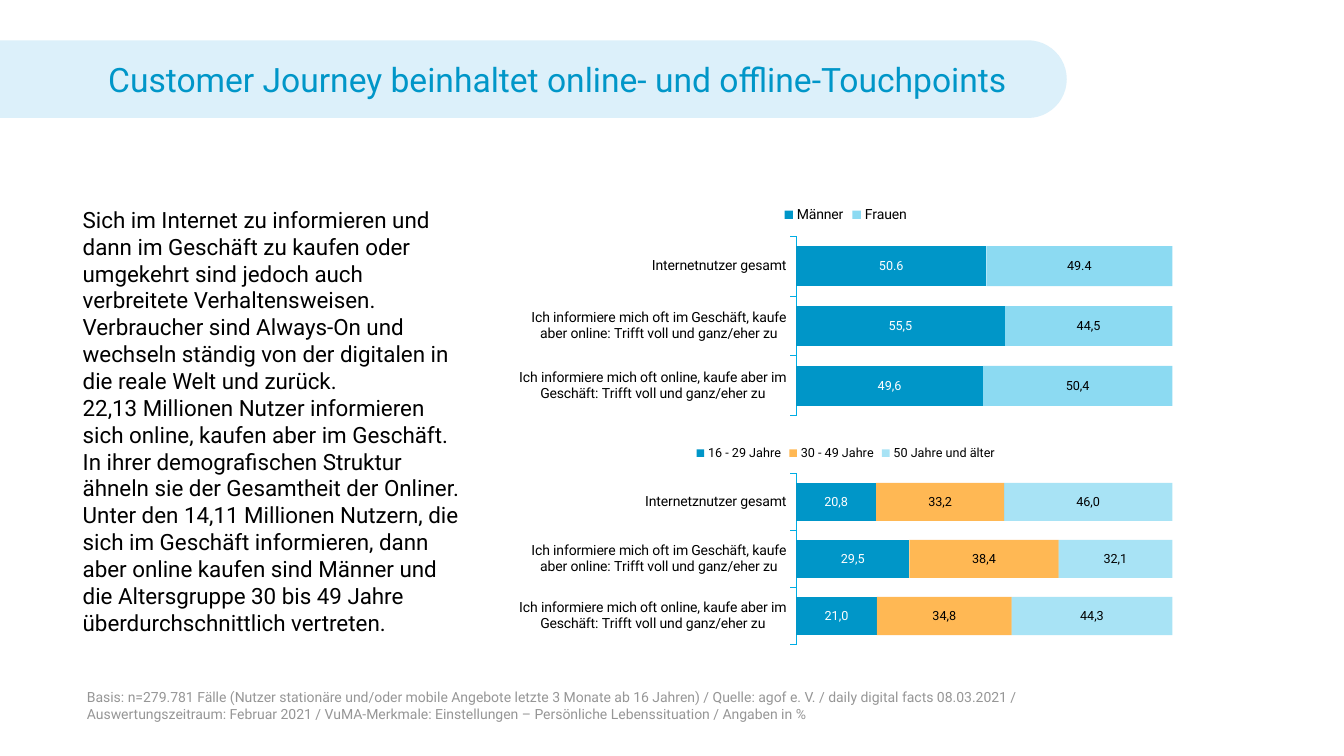
from lxml.etree import SubElement
from pptx import Presentation
from pptx.chart.data import CategoryChartData
from pptx.dml.color import RGBColor
from pptx.enum.chart import XL_CHART_TYPE as ChartType, XL_LEGEND_POSITION as LegendPosition
from pptx.enum.chart import XL_TICK_MARK as TickMark
from pptx.enum.shapes import MSO_SHAPE as Shape
from pptx.enum.text import MSO_ANCHOR as Anchor, PP_ALIGN as Align
from pptx.oxml import parse_xml
from pptx.oxml.ns import nsdecls, qn
from pptx.util import Pt

FONT = "Roboto"
BLACK, WHITE, GREY = "000000", "FFFFFF", "969696"
BLUE, CYAN, ORANGE, PALE = "0096C8", "00ADE4", "FF9600", "DCF0FA"
STORE_THEN_ONLINE = "Ich informiere mich oft im Geschäft, kaufe aber online: Trifft voll und ganz/eher zu"
ONLINE_THEN_STORE = "Ich informiere mich oft online, kaufe aber im Geschäft: Trifft voll und ganz/eher zu"

BODY = (
    "Sich im Internet zu informieren und dann im Geschäft zu kaufen oder umgekehrt sind jedoch "
    "auch verbreitete Verhaltensweisen. Verbraucher sind Always-On und wechseln ständig von der "
    "digitalen in die reale Welt und zurück.\n"
    "22,13 Millionen Nutzer informieren sich online, kaufen aber im Geschäft. In ihrer "
    "demografischen Struktur ähneln sie der Gesamtheit der Onliner. Unter den 14,11 Millionen "
    "Nutzern, die sich im Geschäft informieren, dann aber online kaufen sind Männer und die "
    "Altersgruppe 30 bis 49 Jahre überdurchschnittlich vertreten."
)
SOURCE = (
    "Basis: n=279.781 Fälle (Nutzer stationäre und/oder mobile Angebote letzte 3 Monate ab 16 "
    "Jahren) / Quelle: agof e. V. / daily digital facts 08.03.2021 / Auswertungszeitraum: Februar "
    "2021 / VuMA-Merkmale: Einstellungen – Persönliche Lebenssituation / Angaben in %"
)
GENDER_SERIES = [
    ("Männer", (50.6, 55.5, 49.7), (None, "55,5", "49,6"), BLUE, 100, WHITE),
    ("Frauen", (49.4, 44.5, 50.3), (None, "44,5", "50,4"), CYAN, 45, BLACK),
]
AGE_SERIES = [
    ("16 - 29 Jahre", (21.3, 30.1, 21.5), ("20,8", "29,5", "21,0"), BLUE, 100, WHITE),
    ("30 - 49 Jahre", (34, 39.6, 35.8), ("33,2", "38,4", "34,8"), ORANGE, 67, BLACK),
    ("50 Jahre und älter", (44.7, 30.2, 42.7), ("46,0", "32,1", "44,3"), CYAN, 34, BLACK),
]


def color(value):
    """Turn a hex string into a colour."""
    return RGBColor.from_string(value)


def style_font(font, size, ink):
    """Set typeface, size and colour of a font."""
    font.name, font.size, font.bold = FONT, Pt(size), False
    font.color.rgb = color(ink)


def write(frame, text, size=16, ink=BLACK, align=Align.LEFT, anchor=Anchor.TOP):
    """Fill a text frame with one formatted paragraph."""
    frame.word_wrap, frame.vertical_anchor = True, anchor
    para = frame.paragraphs[0]
    para.text, para.alignment = text, align
    for span in para.runs:
        style_font(span.font, size, ink)


def add_text(page, place, text, **style):
    """Add a text box at a place given in points."""
    box = page.shapes.add_textbox(*map(Pt, place))
    write(box.text_frame, text, **style)


def add_title(page, text):
    """Draw the rounded band and set the title on it."""
    band = page.shapes.add_shape(Shape.ROUNDED_RECTANGLE, Pt(-97), Pt(28.8), Pt(859), Pt(55.5))
    band.adjustments[0] = 0.5
    band.shadow.inherit = False
    band.fill.solid()
    band.fill.fore_color.rgb = color(PALE)
    band.line.fill.background()
    title = page.shapes.title
    title.left, title.top, title.width, title.height = map(Pt, (40, 28.8, 679, 55.5))
    frame = title.text_frame
    frame.margin_left = frame.margin_right = 0
    write(frame, text, size=24, ink=BLUE, align=Align.RIGHT, anchor=Anchor.MIDDLE)
    page.shapes._spTree.append(title._element)


def set_plot_layout(chart):
    """Fix the inner plot area as shares of the chart."""
    layout = parse_xml(f"<c:layout {nsdecls('c')}><c:manualLayout/></c:layout>")
    settings = [("layoutTarget", "inner"), ("xMode", "edge"), ("yMode", "edge"),
                ("x", "0.424"), ("y", "0.185"), ("w", "0.576"), ("h", "0.815")]
    for tag, value in settings:
        SubElement(layout[0], qn(f"c:{tag}")).set("val", value)
    area = chart._chartSpace.chart.plotArea
    for old in area.findall(qn("c:layout")):
        area.remove(old)
    area.insert(0, layout)


def style_series(series, labels, fill, opacity, ink):
    """Colour one series and label its bars."""
    series.format.fill.solid()
    series.format.fill.fore_color.rgb = color(fill)
    if opacity < 100:
        shade = next(series._element.iter(qn("a:srgbClr")))
        SubElement(shade, qn("a:alpha")).set("val", str(opacity * 1000))
    values = series.data_labels
    values.show_value = True
    values.number_format, values.number_format_is_linked = "#,##0.0", False
    style_font(values.font, 9, ink)
    for index, label in enumerate(labels):
        if label:
            para = series.points[index].data_label.text_frame.paragraphs[0]
            span = para.add_run()
            span.text = label
            style_font(span.font, 9, ink)


def add_bars(page, place, first_category, rows, legend_size):
    """Add a horizontal chart of bars stacked to 100 percent."""
    data = CategoryChartData(number_format="0.0")
    data.categories = [first_category, STORE_THEN_ONLINE, ONLINE_THEN_STORE]
    for name, values, *_ in rows:
        data.add_series(name, values)
    chart = page.shapes.add_chart(ChartType.BAR_STACKED_100, *map(Pt, place), data).chart
    style_font(chart.font, 9, BLACK)
    chart.has_title = False
    chart.has_legend = True
    chart.legend.position = LegendPosition.TOP
    chart.legend.include_in_layout = False
    style_font(chart.legend.font, legend_size, BLACK)
    axis = chart.category_axis
    axis.reverse_order = True
    axis.has_major_gridlines = False
    axis.major_tick_mark = TickMark.OUTSIDE
    axis.format.line.color.rgb = color(CYAN)
    axis.format.line.width = Pt(0.75)
    style_font(axis.tick_labels.font, 10, BLACK)
    chart.value_axis.visible = False
    chart.value_axis.has_major_gridlines = False
    plot = chart.plots[0]
    plot.gap_width, plot.overlap, plot.vary_by_categories = 50, 100, False
    for series, (_, _, *style) in zip(plot.series, rows):
        style_series(series, *style)
    set_plot_layout(chart)


def main():
    """Build the slide and save it."""
    deck = Presentation()
    deck.slide_width, deck.slide_height = Pt(960), Pt(540)
    page = deck.slides.add_slide(deck.slide_layouts[5])
    add_title(page, "Customer Journey beinhaltet online- und offline-Touchpoints")
    add_text(page, (52, 140.4, 284, 320.4), BODY, anchor=Anchor.MIDDLE)
    add_text(page, (55, 488, 678, 29), SOURCE, size=10, ink=GREY)
    add_bars(page, (370.8, 139.7, 466.6, 157.7), "Internetnutzer gesamt", GENDER_SERIES, 10)
    add_bars(page, (370.8, 310.3, 466.6, 150.5), "Internetznutzer gesamt", AGE_SERIES, 9)
    deck.save("out.pptx")


if __name__ == "__main__":
    main()
